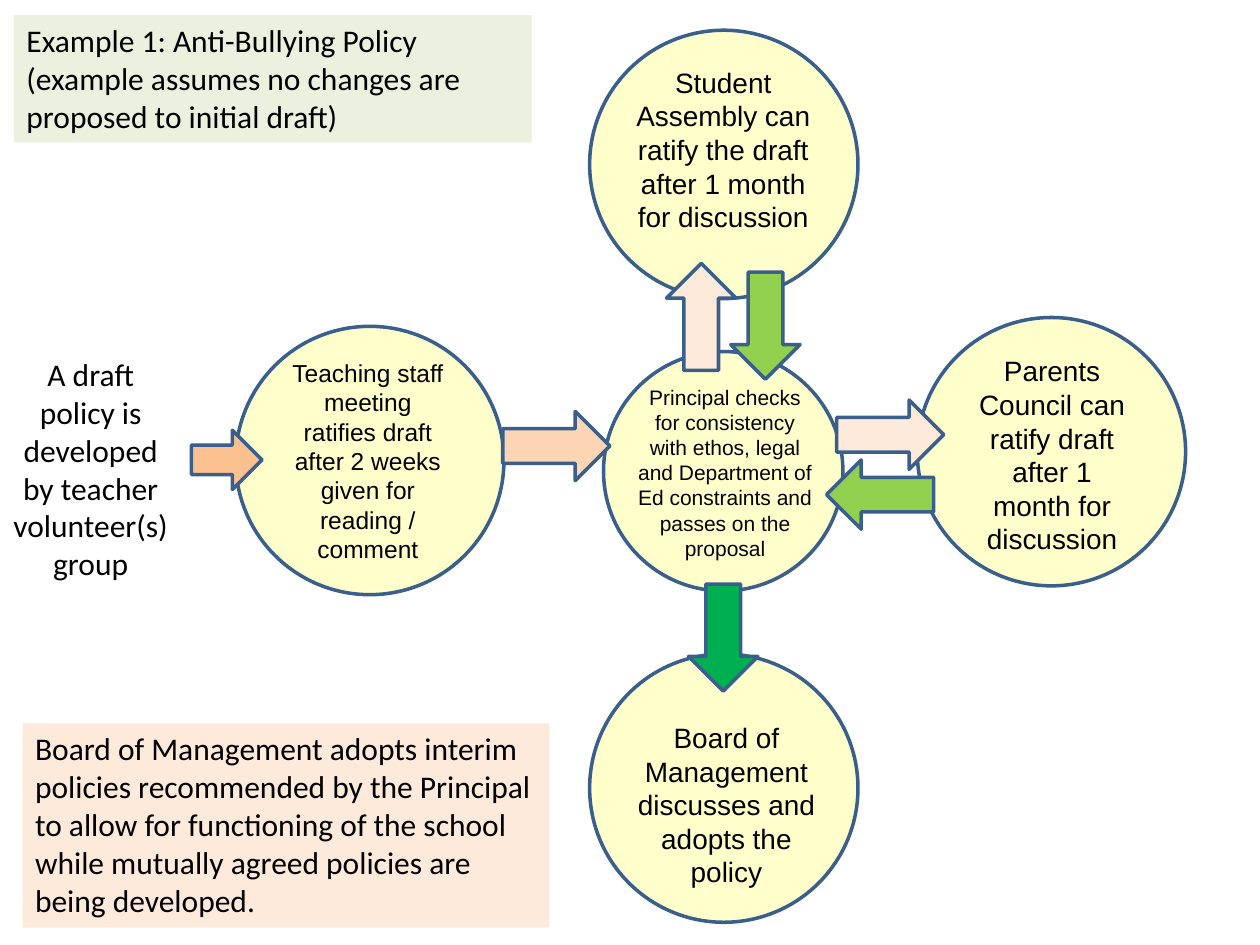
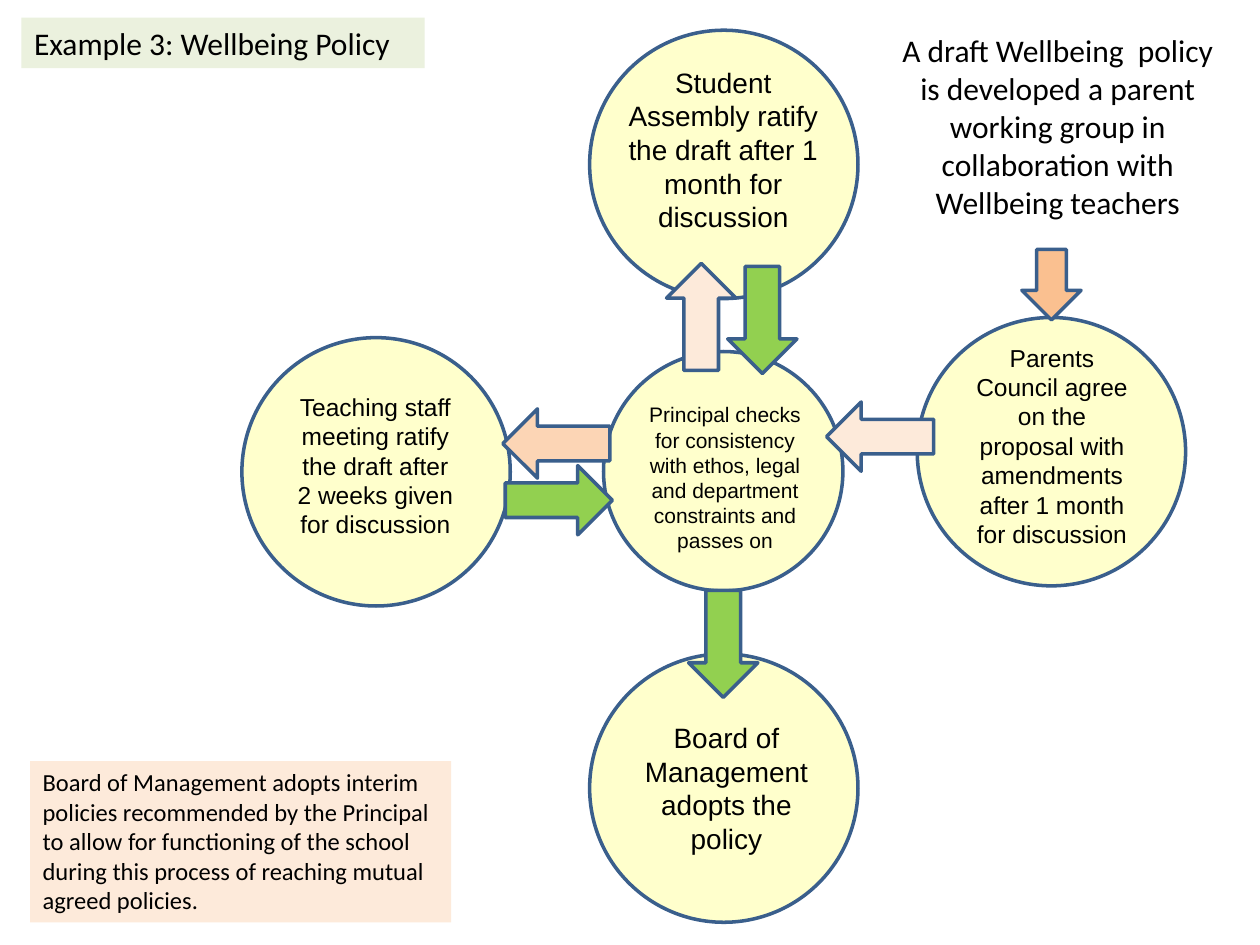
from dataclasses import dataclass
from enum import IntEnum
from typing import NamedTuple, Optional

from pptx import Presentation
from pptx.dml.color import RGBColor
from pptx.enum.shapes import MSO_SHAPE as Preset
from pptx.enum.text import MSO_ANCHOR as Anchor, MSO_AUTO_SIZE as AutoSize, PP_ALIGN as Align
from pptx.util import Emu, Inches, Pt

COLUMNS, ROWS = 100, 75
SLIDE_WIDTH, SLIDE_HEIGHT = Inches(10), Inches(7.5)
TITLE_ONLY_LAYOUT = 5


@dataclass(frozen=True)
class Theme:
    circle: str = "FFFFCC"
    outline: str = "3A5F8C"
    ink: str = "000000"
    title_band: str = "EBF1DE"
    note_band: str = "FDEADA"
    draft: str = "FAC090"
    staff_step: str = "FCD5B5"
    consult: str = "FDEADA"
    agreed: str = "92D050"
    adopted: str = "00B050"
    label_font: str = "Arial"
    text_font: str = "Calibri"
    line_width: float = 2
    heading: int = 18
    large: int = 16
    medium: int = 14
    small: int = 12


THEME = Theme()


class Box(NamedTuple):
    """Left, top, width and height in grid columns and rows."""
    left: float
    top: float
    width: float
    height: float


class Heading(IntEnum):
    """Rotation of a right arrow, in degrees."""
    RIGHT = 0
    DOWN = 90
    LEFT = 180
    UP = 270


class Centre(NamedTuple):
    column: float
    row: float


class ArrowSize(NamedTuple):
    length: float
    breadth: float


LONG = ArrowSize(8.5, 5.5)
SHORT = ArrowSize(5.6, 4.7)


@dataclass(frozen=True)
class Circle:
    centre: Centre
    diameter: float = 21.3


@dataclass(frozen=True)
class Caption:
    box: Box
    text: str
    size: int
    font: str = THEME.label_font
    align: Align = Align.CENTER
    band: Optional[str] = None


@dataclass(frozen=True)
class Arrow:
    centre: Centre
    heading: Heading
    colour: str
    size: ArrowSize = LONG


@dataclass(frozen=True)
class PolicyPage:
    title: Caption
    staff_circle: Circle
    captions: list[Caption]
    arrows: list[Arrow]


SHARED_CIRCLES = [
    Circle(Centre(57.45, 62.55)),
    Circle(Centre(57.45, 13.05)),
    Circle(Centre(83.45, 35.85)),
    Circle(Centre(57.4, 37.4), 19),
]
TO_STUDENTS = Arrow(Centre(55.65, 25.15), Heading.UP, THEME.consult)


def title_caption(box: Box, text: str) -> Caption:
    return Caption(box, text, THEME.heading, THEME.text_font, Align.LEFT, THEME.title_band)


def note_caption(box: Box, text: str, size: int) -> Caption:
    return Caption(box, text, size, THEME.text_font, Align.LEFT, THEME.note_band)


def draft_caption(box: Box, text: str) -> Caption:
    return Caption(box, text, THEME.heading, THEME.text_font)


PAGES = [
    PolicyPage(
        title_caption(Box(1.1, 1.2, 41.1, 10.1),
                      "Example 1: Anti-Bullying Policy (example assumes no changes are "
                      "proposed to initial draft)"),
        Circle(Centre(29.35, 36.55)),
        [
            Caption(Box(21.7, 27.9, 15, 17.5),
                    "Teaching staff meeting ratifies draft after 2 weeks given for "
                    "reading / comment", THEME.medium),
            Caption(Box(76, 27.6, 15, 17.2),
                    "Parents Council can ratify draft after 1 month for discussion", THEME.large),
            Caption(Box(49.4, 30, 16.3, 15.1),
                    "Principal checks for consistency with ethos, legal and Department of Ed "
                    "constraints and passes on the proposal", THEME.small),
            Caption(Box(49.4, 56.7, 16.5, 17.2),
                    "Board of Management discusses and adopts the policy", THEME.large),
            Caption(Box(48.4, 4.7, 18, 14.5),
                    "Student Assembly can ratify the draft after 1 month for discussion",
                    THEME.large),
            draft_caption(Box(-0.1, 27.7, 14.6, 19.2),
                          "A draft policy is developed by teacher volunteer(s)\ngroup"),
            note_caption(Box(1.8, 57.4, 41.8, 16.2),
                         "Board of Management adopts interim policies recommended by the "
                         "Principal to allow for functioning of the school while mutually "
                         "agreed policies are being developed.", THEME.heading),
        ],
        [
            Arrow(Centre(18, 36.5), Heading.RIGHT, THEME.draft, SHORT),
            Arrow(Centre(44.15, 35.4), Heading.RIGHT, THEME.staff_step),
            TO_STUDENTS,
            Arrow(Centre(70.65, 34.5), Heading.RIGHT, THEME.consult),
            Arrow(Centre(57.4, 50.6), Heading.DOWN, THEME.adopted),
            Arrow(Centre(69.85, 39.25), Heading.LEFT, THEME.agreed),
            Arrow(Centre(60.75, 25.85), Heading.DOWN, THEME.agreed),
        ],
    ),
    PolicyPage(
        title_caption(Box(1.7, 1.4, 32, 4), "Example 3: Wellbeing Policy"),
        Circle(Centre(29.85, 37.45)),
        [
            Caption(Box(22.3, 30.6, 15, 12.8),
                    "Teaching staff meeting ratify the draft after 2 weeks given for "
                    "discussion", THEME.medium),
            Caption(Box(76, 26.7, 15, 17.5),
                    "Parents Council agree on the proposal with amendments after 1 month "
                    "for discussion", THEME.medium),
            Caption(Box(49.4, 31.4, 16.3, 13.1),
                    "Principal checks for consistency with ethos, legal and department "
                    "constraints and passes on", THEME.small),
            Caption(Box(49.4, 56.7, 16.5, 14.5),
                    "Board of Management adopts the policy", THEME.large),
            Caption(Box(48.4, 4.7, 18, 14.5),
                    "Student Assembly ratify the draft after 1 month for discussion",
                    THEME.large),
            draft_caption(Box(70.5, 2, 26.9, 16.2),
                          "A draft Wellbeing  policy is developed a parent\n"
                          "working group in collaboration with Wellbeing teachers"),
            note_caption(Box(2.4, 60.4, 33.4, 12.8),
                         "Board of Management adopts interim policies recommended by the "
                         "Principal to allow for functioning of the school during this process "
                         "of reaching mutual agreed policies.", THEME.medium),
        ],
        [
            Arrow(Centre(44.35, 39.7), Heading.RIGHT, THEME.agreed),
            TO_STUDENTS,
            Arrow(Centre(69.85, 34.65), Heading.LEFT, THEME.consult),
            Arrow(Centre(44.15, 35.2), Heading.LEFT, THEME.staff_step),
            Arrow(Centre(83.45, 22.6), Heading.DOWN, THEME.draft, SHORT),
            Arrow(Centre(60.5, 25.4), Heading.DOWN, THEME.agreed),
            Arrow(Centre(57.4, 51.1), Heading.DOWN, THEME.agreed),
        ],
    ),
]


def set_all(target, **values) -> None:
    for name, value in values.items():
        setattr(target, name, value)


def place(box: Box) -> dict[str, Emu]:
    """Turn grid units into lengths on the slide."""
    column, row = SLIDE_WIDTH / COLUMNS, SLIDE_HEIGHT / ROWS
    return dict(left=Emu(round(box.left * column)), top=Emu(round(box.top * row)),
                width=Emu(round(box.width * column)), height=Emu(round(box.height * row)))


def centred_box(centre: Centre, width: float, height: float) -> Box:
    return Box(centre.column - width / 2, centre.row - height / 2, width, height)


def fill_solid(shape, colour: str) -> None:
    shape.fill.solid()
    shape.fill.fore_color.rgb = RGBColor.from_string(colour)


def draw_outlined(page, preset: Preset, box: Box, colour: str, rotation: float = 0) -> None:
    shape = page.shapes.add_shape(preset, **place(box))
    shape.rotation = rotation
    shape.shadow.inherit = False
    fill_solid(shape, colour)
    shape.line.color.rgb = RGBColor.from_string(THEME.outline)
    shape.line.width = Pt(THEME.line_width)


def write_caption(shape, caption: Caption) -> None:
    """Move a text shape into place, then fill and format it."""
    set_all(shape, **place(caption.box))
    if caption.band:
        fill_solid(shape, caption.band)
    frame = shape.text_frame
    set_all(frame, text=caption.text, word_wrap=True, auto_size=AutoSize.NONE,
            vertical_anchor=Anchor.TOP)
    for para in frame.paragraphs:
        para.alignment = caption.align
        for span in para.runs:
            set_all(span.font, name=caption.font, size=Pt(caption.size))
            span.font.color.rgb = RGBColor.from_string(THEME.ink)


def draw_page(deck, content: PolicyPage) -> None:
    page = deck.slides.add_slide(deck.slide_layouts[TITLE_ONLY_LAYOUT])
    write_caption(page.shapes.title, content.title)
    for circle in [content.staff_circle, *SHARED_CIRCLES]:
        box = centred_box(circle.centre, circle.diameter, circle.diameter)
        draw_outlined(page, Preset.OVAL, box, THEME.circle)
    for caption in content.captions:
        write_caption(page.shapes.add_textbox(**place(caption.box)), caption)
    for arrow in content.arrows:
        box = centred_box(arrow.centre, *arrow.size)
        draw_outlined(page, Preset.RIGHT_ARROW, box, arrow.colour, arrow.heading)


def main() -> None:
    deck = Presentation()
    set_all(deck, slide_width=SLIDE_WIDTH, slide_height=SLIDE_HEIGHT)
    for content in PAGES:
        draw_page(deck, content)
    deck.save("out.pptx")


if __name__ == "__main__":
    main()
